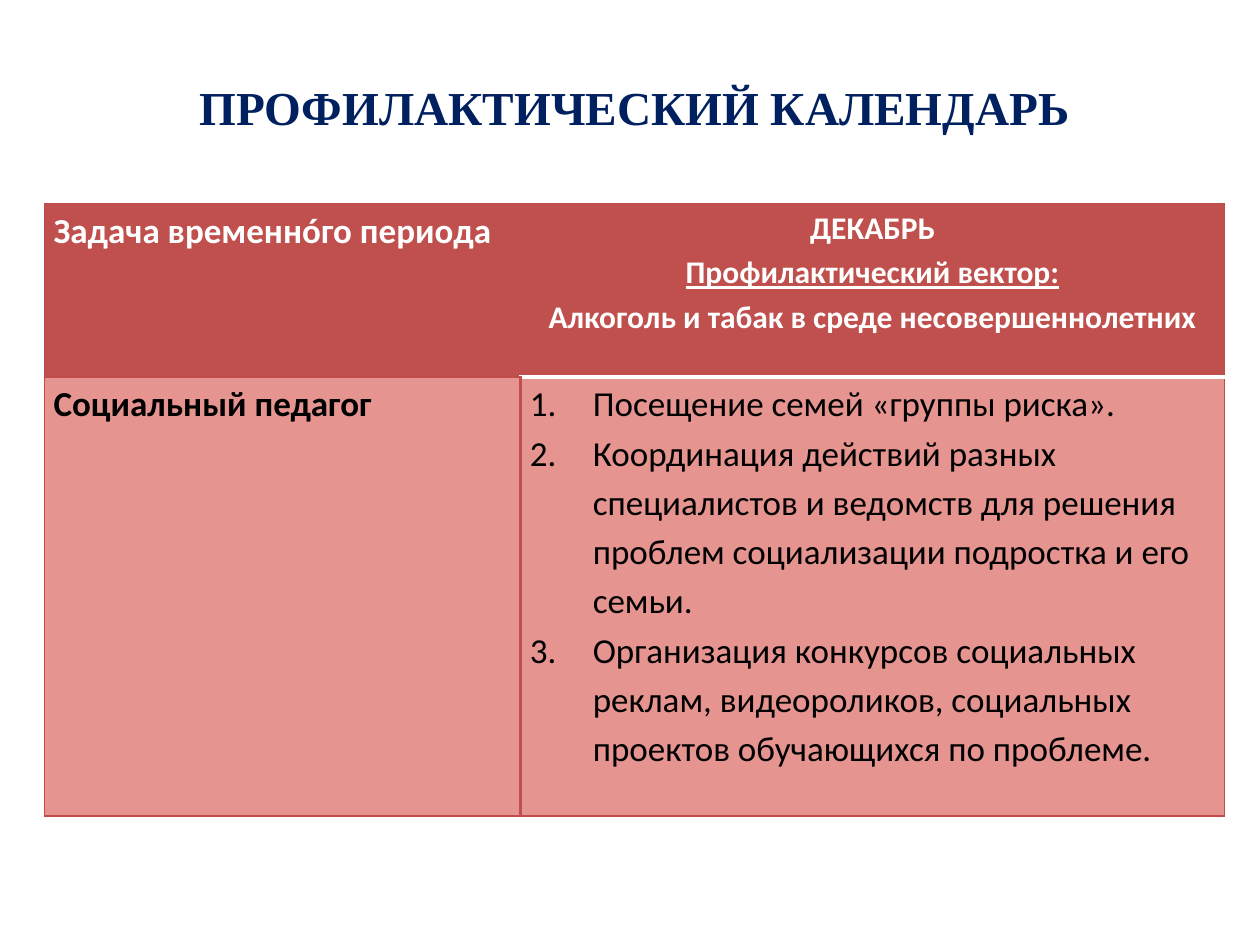
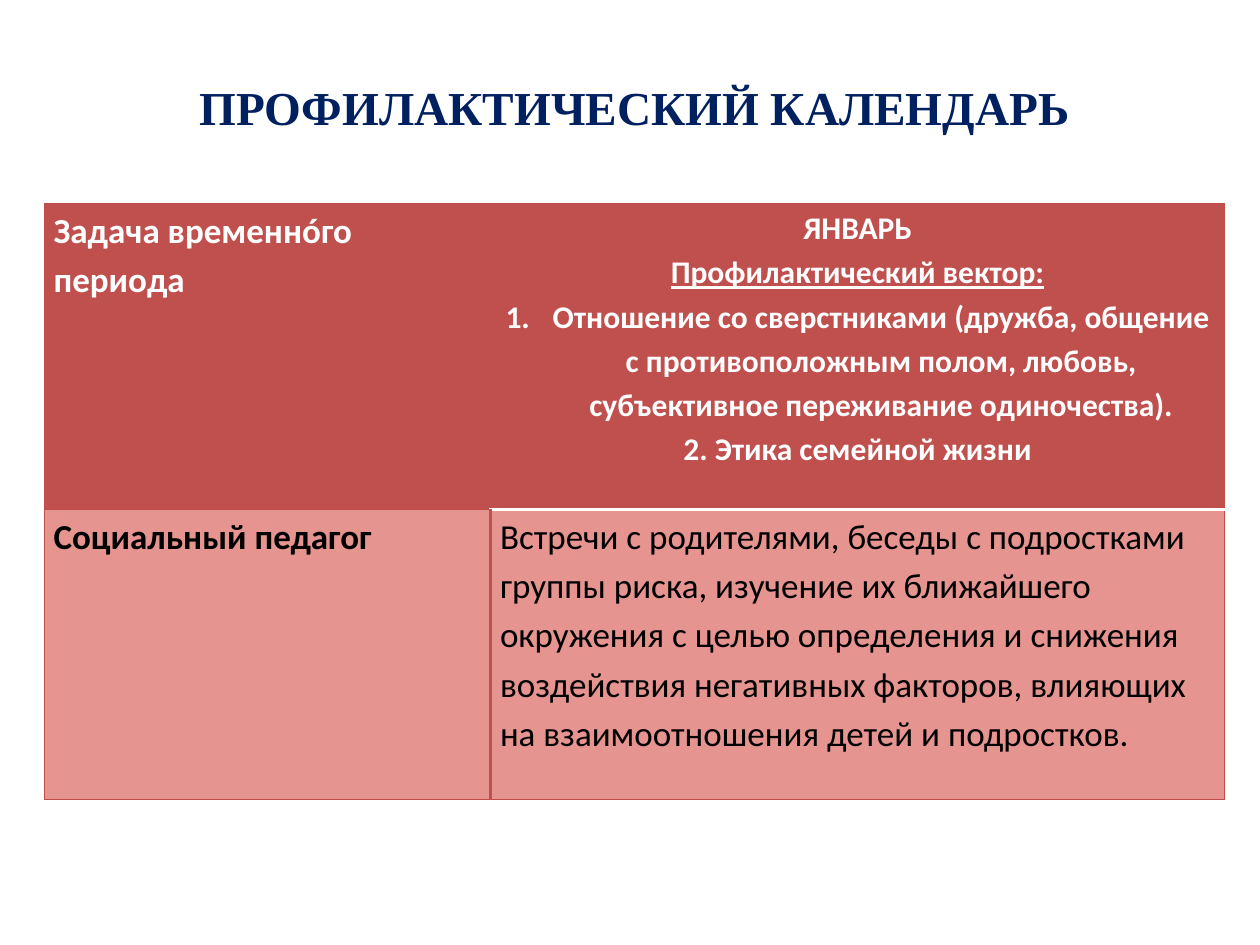
"""Build the two preventive calendar slides for December and January."""
from dataclasses import dataclass
from typing import Any

from lxml import etree
from pptx import Presentation
from pptx.dml.color import RGBColor
from pptx.enum.text import MSO_ANCHOR, PP_ALIGN
from pptx.oxml.ns import qn
from pptx.util import Cm, Pt

LEFT, MID, ANCHOR = PP_ALIGN.LEFT, PP_ALIGN.CENTER, MSO_ANCHOR.MIDDLE
NAVY = RGBColor(0x00, 0x20, 0x60)
RED = RGBColor(0xC0, 0x50, 0x4D)
EDGE = RGBColor(0xBF, 0x4C, 0x48)
PINK = RGBColor(0xE5, 0x94, 0x90)
WHITE = RGBColor(0xFF, 0xFF, 0xFF)
BLACK = RGBColor(0x00, 0x00, 0x00)
PLAIN = "{2D5ABB26-0587-4C30-8999-92F81FD0307C}"
TITLE = "ПРОФИЛАКТИЧЕСКИЙ КАЛЕНДАРЬ"
TASK = "Задача временнóго периода"
ROLE = "Социальный педагог"
VECTOR = "Профилактический вектор:"

BASE = {"name": "Calibri", "size": Pt(20), "bold": True, "underline": False}
HEAD = BASE | {"color": WHITE}
TOPIC = HEAD | {"size": Pt(18)}
BODY = BASE | {"color": BLACK}
WORK = BODY | {"bold": False}
BANNER = BASE | {"name": "Times New Roman", "size": Pt(27), "color": NAVY}

THIN, NONE = (EDGE, 0.75), None
GAP, SPLIT = (WHITE, 2), (RED, 2)


@dataclass
class Line:
    """A paragraph with its look and, if numbered, its hanging indent."""
    text: str
    look: dict[str, Any]
    align: PP_ALIGN = LEFT
    hang: float = 0


@dataclass
class Month:
    """A calendar table: column widths, row heights, topic and work lines."""
    cols: tuple[float, float]
    rows: tuple[float, float]
    topic: list[Line]
    work: list[Line]


@dataclass
class Box:
    """The fill and the left, right, top and bottom borders of a cell."""
    fill: RGBColor
    sides: tuple


BOXES = [
    [Box(RED, (THIN, NONE, THIN, THIN)), Box(RED, (NONE, THIN, THIN, GAP))],
    [Box(PINK, (THIN, SPLIT, THIN, THIN)), Box(PINK, (SPLIT, THIN, GAP, THIN))],
]

MONTHS = [
    Month(
        (9.6, 14.2), (3.49, 8.85),
        [
            Line("ДЕКАБРЬ", TOPIC, MID),
            Line(VECTOR, TOPIC | {"underline": True}, MID),
            Line("Алкоголь и табак в среде несовершеннолетних", TOPIC, MID),
        ],
        [
            Line("Посещение семей «группы риска».", WORK, hang=1.27),
            Line("Координация действий разных специалистов и ведомств для "
                 "решения проблем социализации подростка и его семьи.",
                 WORK, hang=1.27),
            Line("Организация конкурсов социальных реклам, видеороликов, "
                 "социальных проектов обучающихся по проблеме.",
                 WORK, hang=1.27),
        ],
    ),
    Month(
        (9, 14.8), (6.16, 5.84),
        [
            Line("ЯНВАРЬ", TOPIC, MID),
            Line(VECTOR, TOPIC | {"underline": True}, MID),
            Line("Отношение со сверстниками (дружба, общение с "
                 "противоположным полом, любовь, субъективное переживание "
                 "одиночества).", TOPIC, MID, 0.95),
            Line("2. Этика семейной жизни", TOPIC, MID),
        ],
        [
            Line("Встречи с родителями, беседы с подростками группы риска, "
                 "изучение их ближайшего окружения с целью определения и "
                 "снижения воздействия негативных факторов, влияющих на "
                 "взаимоотношения детей и подростков.", WORK),
        ],
    ),
]


def write(frame: Any, lines: list[Line], space: float) -> None:
    """Fill a text frame with lines, numbering those that hang."""
    for num, line in enumerate(lines):
        para = frame.add_paragraph() if num else frame.paragraphs[0]
        para.alignment, para.line_spacing = line.align, space
        run = para.add_run()
        run.text = line.text
        for key, value in line.look.items():
            if key == "color":
                run.font.color.rgb = value
            else:
                setattr(run.font, key, value)
        if line.hang:
            props = para._p.get_or_add_pPr()
            props.set("marL", str(Cm(line.hang)))
            props.set("indent", str(-Cm(line.hang)))
            etree.SubElement(props, qn("a:buFont"), typeface="+mj-lt")
            etree.SubElement(props, qn("a:buAutoNum"), type="arabicPeriod")


def paint(cell: Any, box: Box) -> None:
    """Give a cell its margins, borders and fill."""
    cell.margin_left = cell.margin_right = Cm(0.19)
    cell.margin_top = cell.margin_bottom = 0
    props = cell._tc.get_or_add_tcPr()
    for side, edge in zip("LRTB", box.sides):
        line = etree.SubElement(props, qn(f"a:ln{side}"))
        if edge is None:
            etree.SubElement(line, qn("a:noFill"))
            continue
        color, width = edge
        line.set("w", str(Pt(width)))
        fill = etree.SubElement(line, qn("a:solidFill"))
        etree.SubElement(fill, qn("a:srgbClr"), val=str(color))
    cell.fill.solid()
    cell.fill.fore_color.rgb = box.fill


def draw_title(slide: Any) -> None:
    """Draw the shared slide title."""
    frame = slide.shapes.add_textbox(
        Cm(1.27), Cm(0.56), Cm(23.04), Cm(3.18)).text_frame
    frame.word_wrap, frame.vertical_anchor = True, ANCHOR
    write(frame, [Line(TITLE, BANNER, MID)], 1)


def draw_month(slide: Any, month: Month) -> None:
    """Draw the table of one month."""
    shape = slide.shapes.add_table(
        2, 2, Cm(0.89), Cm(4.11), Cm(sum(month.cols)), Cm(sum(month.rows)))
    table = shape.table
    table.first_row = table.horz_banding = False
    for style in shape.element.iter(qn("a:tableStyleId")):
        style.text = PLAIN
    for col, width in zip(table.columns, month.cols):
        col.width = Cm(width)
    for row, height in zip(table.rows, month.rows):
        row.height = Cm(height)
    texts = [[Line(TASK, HEAD)], month.topic, [Line(ROLE, BODY)], month.work]
    boxes = [box for row in BOXES for box in row]
    for cell, lines, box in zip(table.iter_cells(), texts, boxes):
        paint(cell, box)
        write(cell.text_frame, lines, 1.15)


def main() -> None:
    """Build and save the slides."""
    deck = Presentation()
    deck.slide_width, deck.slide_height = Cm(25.4), Cm(19.05)
    for month in MONTHS:
        slide = deck.slides.add_slide(deck.slide_layouts[6])
        draw_month(slide, month)
        draw_title(slide)
    deck.save("out.pptx")


if __name__ == "__main__":
    main()
